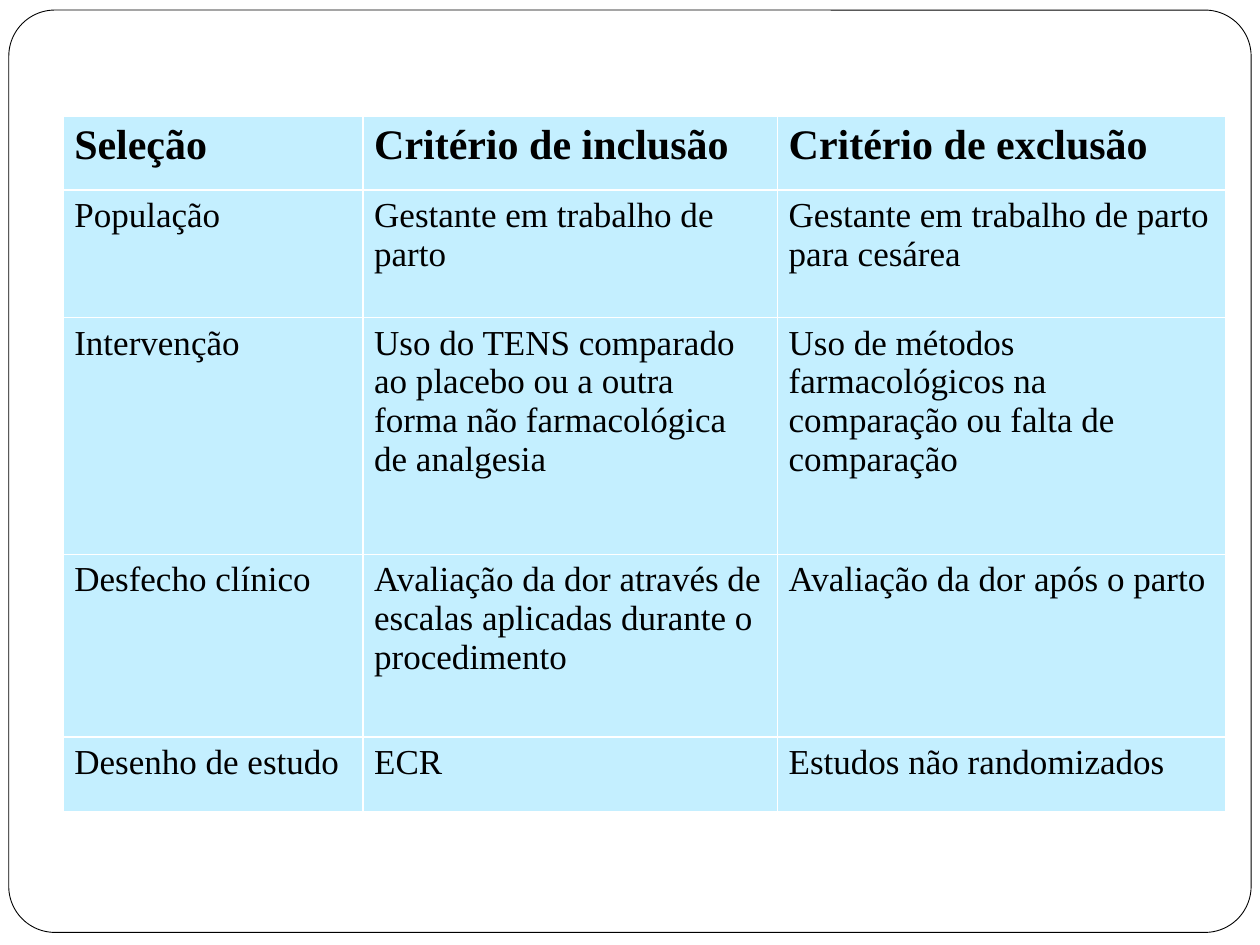
from pptx import Presentation
from pptx.dml.color import RGBColor
from pptx.enum import shapes
from pptx.util import Inches, Pt


def color(value):
    return RGBColor.from_string(value)


COLUMN_WIDTHS = [2.38, 3.29, 3.56]
ROW_HEIGHTS = [0.59, 1.01, 1.88, 1.45, 0.59]
CRITERIA = [
    ["Seleção", "Critério de inclusão", "Critério de exclusão"],
    ["População", "Gestante em trabalho de parto",
     "Gestante em trabalho de parto para cesárea"],
    ["Intervenção",
     "Uso do TENS comparado ao placebo ou a outra forma não farmacológica de analgesia",
     "Uso de métodos farmacológicos na comparação ou falta de comparação"],
    ["Desfecho clínico",
     "Avaliação da dor através de escalas aplicadas durante o procedimento",
     "Avaliação da dor após o parto"],
    ["Desenho de estudo", "ECR", "Estudos não randomizados"],
]

presentation = Presentation()
presentation.slide_width = Inches(10)
presentation.slide_height = Inches(7.5)
slide = presentation.slides.add_slide(presentation.slide_layouts[6])

frame = slide.shapes.add_shape(
    shapes.MSO_SHAPE.ROUNDED_RECTANGLE,
    Inches(0.07), Inches(0.08), Inches(9.86), Inches(7.32))
frame.adjustments[0] = 0.05
frame.shadow.inherit = False
frame.fill.solid()
frame.fill.fore_color.rgb = color("FFFFFF")
frame.line.color.rgb = color("000000")
frame.line.width = Pt(0.5)

# The default table style supplies the white borders, thicker below the header.
table = slide.shapes.add_table(
    len(ROW_HEIGHTS), len(COLUMN_WIDTHS), Inches(0.5), Inches(0.92),
    Inches(sum(COLUMN_WIDTHS)), Inches(sum(ROW_HEIGHTS))).table
table.horz_banding = False
for column, width in zip(table.columns, COLUMN_WIDTHS):
    column.width = Inches(width)

for row, height, texts in zip(table.rows, ROW_HEIGHTS, CRITERIA):
    row.height = Inches(height)
    is_header = texts is CRITERIA[0]
    for cell, content in zip(row.cells, texts):
        cell.fill.solid()
        cell.fill.fore_color.rgb = color("C4EFFF")
        cell.margin_left = cell.margin_right = Inches(0.09)
        cell.text = content
        font = cell.text_frame.paragraphs[0].font
        font.name = "Times New Roman"
        font.size = Pt(24 if is_header else 20)
        font.bold = is_header
        font.color.rgb = color("000000")

presentation.save("out.pptx")
